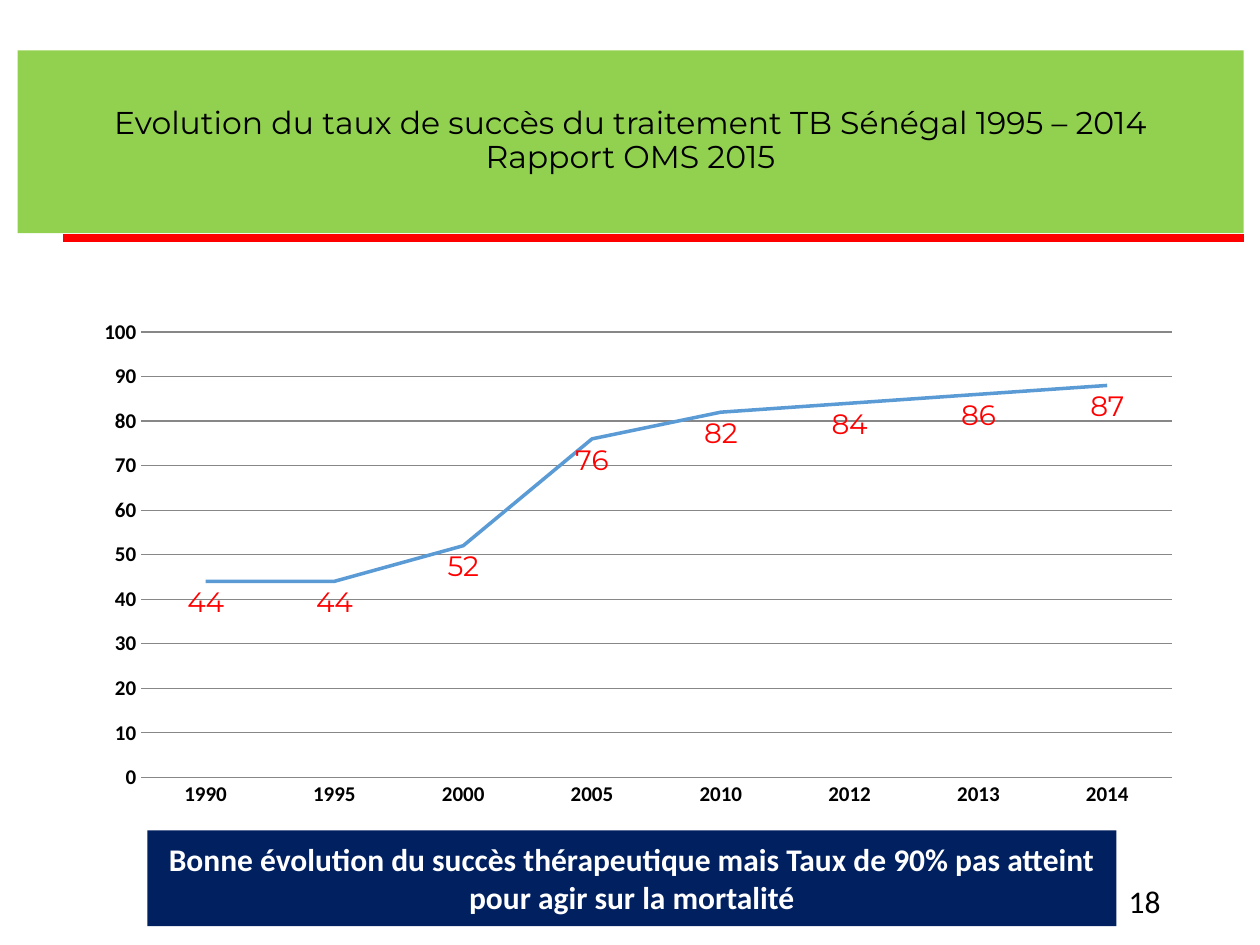
from lxml.etree import SubElement
from pptx import Presentation
from pptx.chart.data import CategoryChartData
from pptx.dml.color import RGBColor
from pptx.enum.chart import XL_CHART_TYPE, XL_LABEL_POSITION, XL_MARKER_STYLE, XL_TICK_MARK
from pptx.enum.shapes import MSO_CONNECTOR, MSO_SHAPE
from pptx.enum.text import MSO_ANCHOR, PP_ALIGN
from pptx.oxml import parse_xml
from pptx.oxml.ns import nsdecls, qn
from pptx.util import Inches, Pt

# Content
TITLE = "Evolution du taux de succès du traitement TB Sénégal 1995 – 2014\vRapport OMS 2015"
MESSAGE = ("Bonne évolution du succès thérapeutique mais Taux de 90% pas atteint "
           "pour agir sur la mortalité")
PAGE = "18"
RATES = [("1990", 44), ("1995", 44), ("2000", 52), ("2005", 76),
         ("2010", 82), ("2012", 84), ("2013", 86), ("2014", 88)]
LABEL_TEXTS = {7: "87"}
PLOT = {"x": 0.1, "y": 0.16, "w": 0.86, "h": 0.72}

THEME = {
    "head": "Montserrat", "body": "Calibri",
    "text": "000000", "light": "FFFFFF", "banner": "92D050", "accent": "FF0000",
    "box": "002060", "line": "5B9BD5", "grid": "878787",
    "text_size": 18, "label_size": 16, "axis_size": 12, "chart_size": 10,
}


def rgb(name):
    return RGBColor.from_string(THEME[name])


def style_font(font, face, size, color, bold=False):
    font.name, font.size, font.bold = THEME[face], Pt(THEME[size]), bold
    font.color.rgb = rgb(color)


def set_text(shape, text, face, color, align, bold=False):
    tf = shape.text_frame
    tf.word_wrap = True
    tf.vertical_anchor = MSO_ANCHOR.MIDDLE
    tf.text = text
    p = tf.paragraphs[0]
    p.alignment = align
    for r in p.runs:
        style_font(r.font, face, "text_size", color, bold)
    return p


def fill(shape, color):
    shape.fill.solid()
    shape.fill.fore_color.rgb = rgb(color)


def place_plot(chart):
    plot_area = chart._chartSpace.chart.plotArea
    for old in plot_area.findall(qn("c:layout")):
        plot_area.remove(old)
    layout = parse_xml(f"<c:layout {nsdecls('c')}/>")
    manual = SubElement(layout, qn("c:manualLayout"))
    settings = {"layoutTarget": "inner", "xMode": "edge", "yMode": "edge", **PLOT}
    for tag, value in settings.items():
        SubElement(manual, qn(f"c:{tag}")).set("val", str(value))
    plot_area.insert(0, layout)


prs = Presentation()
prs.slide_width, prs.slide_height = Inches(10), Inches(7.5)
s = prs.slides.add_slide(prs.slide_layouts[5])

# Title banner
title = s.shapes.title
title.left, title.top, title.width, title.height = map(Inches, (0.14, 0.4, 9.73, 1.45))
fill(title, "banner")
set_text(title, TITLE, "head", "text", PP_ALIGN.CENTER).line_spacing = 0.9

# Line chart
data = CategoryChartData()
data.categories = [year for year, _ in RATES]
data.add_series("Series 1", [rate for _, rate in RATES])
chart = s.shapes.add_chart(XL_CHART_TYPE.LINE, *map(Inches, (0.17, 1.85, 9.51, 4.91)), data).chart
chart.has_legend = chart.has_title = False
style_font(chart.font, "body", "chart_size", "text")
place_plot(chart)

for axis in (chart.category_axis, chart.value_axis):
    axis.major_tick_mark = axis.minor_tick_mark = XL_TICK_MARK.NONE
    style_font(axis.tick_labels.font, "body", "axis_size", "text", True)
chart.category_axis.format.line.color.rgb = rgb("grid")
values = chart.value_axis
values.minimum_scale, values.maximum_scale, values.major_unit = 0, 100, 10
values.format.line.fill.background()
values.has_major_gridlines = True
values.major_gridlines.format.line.color.rgb = rgb("grid")

plot = chart.plots[0]
plot.vary_by_categories = False
series = plot.series[0]
series.smooth = False
series.marker.style = XL_MARKER_STYLE.NONE
series.format.line.color.rgb = rgb("line")
series.format.line.width = Pt(2)
labels = series.data_labels
labels.show_value = True
labels.position = XL_LABEL_POSITION.BELOW
style_font(labels.font, "head", "label_size", "accent")
for index, text in LABEL_TEXTS.items():
    label = series.points[index].data_label
    label.text_frame.text = text
    label.position = XL_LABEL_POSITION.BELOW
    style_font(label.text_frame.paragraphs[0].runs[0].font, "head", "label_size", "accent")

# Key message
box = s.shapes.add_shape(MSO_SHAPE.RECTANGLE, *map(Inches, (1.17, 6.59, 7.69, 0.76)))
box.shadow.inherit = False
fill(box, "box")
box.line.fill.background()
set_text(box, MESSAGE, "body", "light", PP_ALIGN.CENTER, True)

# Page number
number = s.shapes.add_textbox(*map(Inches, (7.06, 6.95, 2.25, 0.4)))
set_text(number, PAGE, "body", "text", PP_ALIGN.RIGHT)

# Rule under the banner
rule = s.shapes.add_connector(MSO_CONNECTOR.STRAIGHT, *map(Inches, (0.5, 1.89, 9.87, 1.89)))
rule.line.color.rgb = rgb("accent")
rule.line.width = Pt(4.5)
SubElement(rule._element.spPr, qn("a:effectLst"))

prs.save("out.pptx")
